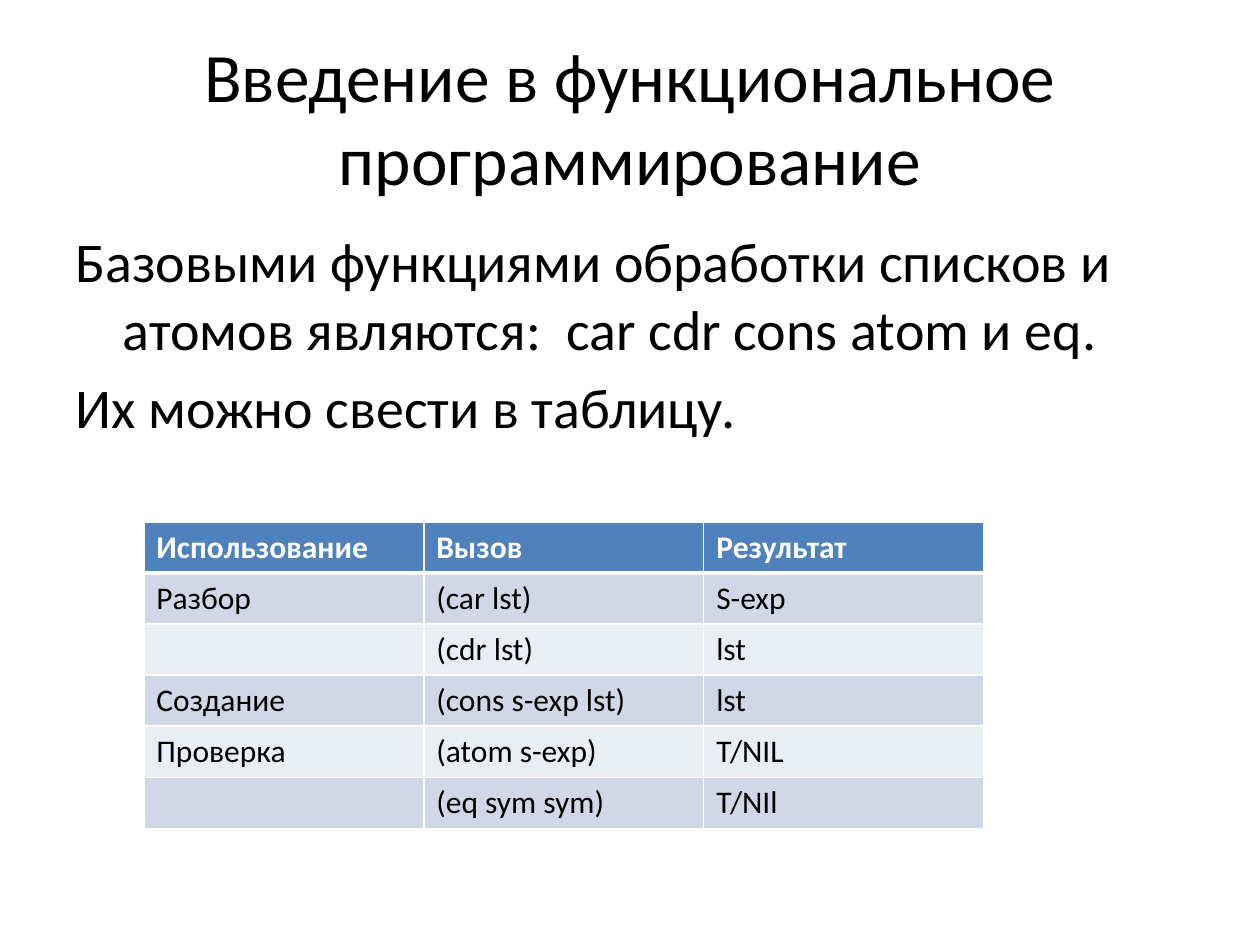
import pptx
import pptx.dml.color
import pptx.enum.text
import pptx.oxml
import pptx.oxml.ns
import pptx.util
from dataclasses import dataclass

Cm = pptx.util.Cm
Pt = pptx.util.Pt


@dataclass(frozen=True)
class Theme:
    font: str = "Calibri"
    ink: str = "000000"
    white: str = "FFFFFF"
    head: str = "4F81BD"
    bands: tuple = ("D0D8E8", "E9EDF4")
    title: float = 39.6
    body: float = 32
    cell: float = 18
    thin: float = 1
    thick: float = 3


THEME = Theme()

TITLE = "Введение в функциональное программирование"
BODY = (
    "Базовыми функциями обработки списков и атомов являются:  car cdr cons atom и eq.",
    "Их можно свести в таблицу.",
)
ROWS = (
    ("Использование", "Вызов", "Результат"),
    ("Разбор", "(car lst)", "S-exp"),
    ("", "(cdr lst)", "lst"),
    ("Создание", "(cons s-exp lst)", "lst"),
    ("Проверка", "(atom s-exp)", "T/NIL"),
    ("", "(eq sym sym)", "T/NIl"),
)


def rgb(code):
    return pptx.dml.color.RGBColor.from_string(code)


def style(font, size, color, bold=False):
    font.name = THEME.font
    font.size = Pt(size)
    font.bold = bold
    font.color.rgb = rgb(color)


def add_text(slide, box, lines, size):
    """Add a wrapped text box with one paragraph per line and return its frame."""
    frame = slide.shapes.add_textbox(*box).text_frame
    frame.word_wrap = True
    frame.text = "\n".join(lines)
    for para in frame.paragraphs:
        for run in para.runs:
            style(run.font, size, THEME.ink)
    return frame


def add_title(slide, box):
    frame = add_text(slide, box, (TITLE,), THEME.title)
    frame.vertical_anchor = pptx.enum.text.MSO_ANCHOR.MIDDLE
    frame.paragraphs[0].alignment = pptx.enum.text.PP_ALIGN.CENTER


def add_body(slide, box):
    frame = add_text(slide, box, BODY, THEME.body)
    hang = Cm(0.95)
    for para in frame.paragraphs:
        para.space_before = Pt(THEME.body * 0.2)
        props = para._p.get_or_add_pPr()
        props.set("marL", str(hang))
        props.set("indent", str(-hang))


def add_edge(cell, side, width):
    """Draw one white cell border; side is L, R, T or B."""
    space = pptx.oxml.ns.nsdecls("a")
    edge = pptx.oxml.parse_xml(
        f'<a:ln{side} {space} w="{Pt(width)}"><a:solidFill>'
        f'<a:srgbClr val="{THEME.white}"/></a:solidFill></a:ln{side}>'
    )
    cell._tc.get_or_add_tcPr().append(edge)


def fill_cell(cell, text, row):
    head = row == 0
    edges = {
        "L": THEME.thin,
        "R": THEME.thin,
        "T": THEME.thick if row == 1 else THEME.thin,
        "B": THEME.thick if head else THEME.thin,
    }
    for side, width in edges.items():
        add_edge(cell, side, width)
    cell.fill.solid()
    cell.fill.fore_color.rgb = rgb(THEME.head if head else THEME.bands[(row - 1) % 2])
    cell.text = text
    for run in cell.text_frame.paragraphs[0].runs:
        style(run.font, THEME.cell, THEME.white if head else THEME.ink, head)


def add_grid(slide, box):
    table = slide.shapes.add_table(len(ROWS), len(ROWS[0]), *box).table
    for r, texts in enumerate(ROWS):
        for c, text in enumerate(texts):
            fill_cell(table.cell(r, c), text, r)


def main():
    deck = pptx.Presentation()
    deck.slide_width, deck.slide_height = Cm(25.4), Cm(19.05)
    slide = deck.slides.add_slide(deck.slide_layouts[6])
    left, width = Cm(1.27), Cm(22.86)
    add_title(slide, (left, Cm(0.76), width, Cm(3.18)))
    add_body(slide, (left, Cm(4.45), width, Cm(12.57)))
    add_grid(slide, (Cm(2.9), Cm(10.52), Cm(16.93), Cm(6.18)))
    deck.save("out.pptx")


if __name__ == "__main__":
    main()
